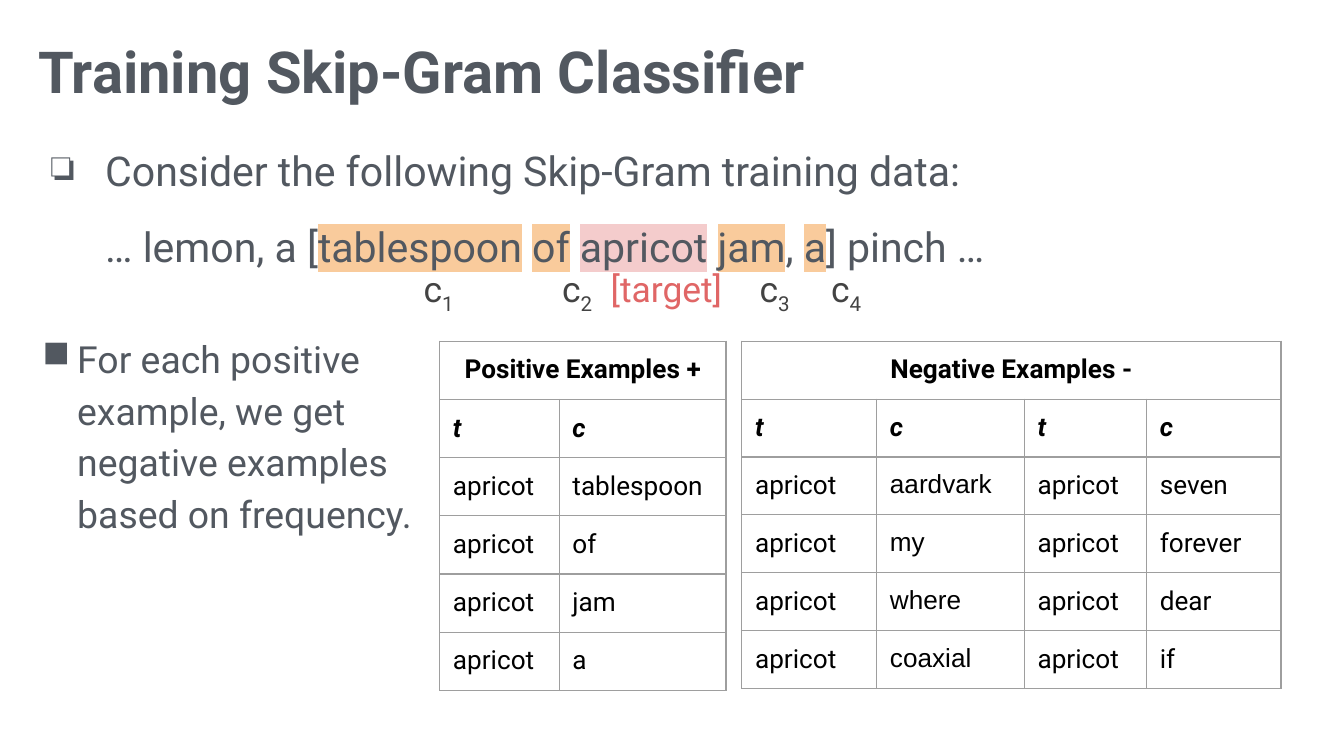
import dataclasses

import lxml.etree
import pptx
import pptx.dml.color
import pptx.enum.text
import pptx.oxml.ns
import pptx.util

Cm, Pt = pptx.util.Cm, pptx.util.Pt
RGB = pptx.dml.color.RGBColor.from_string
qn = pptx.oxml.ns.qn
SubElement = lxml.etree.SubElement
CENTER = pptx.enum.text.PP_ALIGN.CENTER


@dataclasses.dataclass(frozen=True)
class Theme:
    font: str = "Roboto"
    word_font: str = "Arial"
    slate: str = "525860"
    label: str = "434343"
    target: str = "E06666"
    black: str = "000000"
    border: str = "9E9E9E"
    context_mark: str = "F9CB9C"
    target_mark: str = "F4CCCC"
    title_size: int = 31
    lead_size: int = 22
    note_size: int = 20
    label_size: int = 19
    table_size: int = 14


THEME = Theme()


def write(frame, *runs, size, color=THEME.slate, font=THEME.font, bold=False, italic=False,
          align=None, spacing=None, before=None, after=None, bullet=None,
          left=0, hanging=0, inset=None):
    """Add a paragraph; a run is a string or (string, {"mark": colour, "baseline": percent})."""
    frame.word_wrap = True
    if inset is not None:
        frame.margin_left = frame.margin_right = Cm(inset)
        frame.margin_top = frame.margin_bottom = Cm(inset)
    paragraph = frame.paragraphs[0] if not frame.text else frame.add_paragraph()
    paragraph.alignment = align
    paragraph.line_spacing = spacing
    if before is not None:
        paragraph.space_before = Pt(before)
    if after is not None:
        paragraph.space_after = Pt(after)
    properties = paragraph._p.get_or_add_pPr()
    properties.set("marL", str(Cm(left)))
    properties.set("indent", str(-Cm(hanging)))
    if bullet:
        bullet_color = SubElement(properties, qn("a:buClr"))
        SubElement(bullet_color, qn("a:srgbClr"), val=color)
        SubElement(properties, qn("a:buChar"), char=bullet)
    for part in runs:
        text, extra = (part, {}) if isinstance(part, str) else part
        run = paragraph.add_run()
        run.text = text
        run.font.size, run.font.name = Pt(size), font
        run.font.bold, run.font.italic = bold, italic
        run.font.color.rgb = RGB(color)
        run_properties = run._r.get_or_add_rPr()
        if "baseline" in extra:
            run_properties.set("baseline", str(extra["baseline"] * 1000))
        if "mark" in extra:
            highlight = lxml.etree.Element(qn("a:highlight"))
            SubElement(highlight, qn("a:srgbClr"), val=extra["mark"])
            run_properties.find(qn("a:solidFill")).addnext(highlight)


def add_frame(left, top, width, height):
    return slide.shapes.add_textbox(Cm(left), Cm(top), Cm(width), Cm(height)).text_frame


deck = pptx.Presentation()
deck.slide_width, deck.slide_height = Cm(25.4), Cm(14.29)
slide = deck.slides.add_slide(deck.slide_layouts[6])

# Title and training sentence
title = add_frame(0.56, 0.51, 24.2, 1.25)
write(title, "Training Skip-Gram Classifier", size=THEME.title_size, bold=True, inset=0.16)

context = {"mark": THEME.context_mark}
target = {"mark": THEME.target_mark}
lead = add_frame(0.56, 2.46, 24.2, 3.78)
lead_format = dict(size=THEME.lead_size, spacing=1.15, left=1.27, inset=0.16)
write(lead, "Consider the following Skip-Gram training data:", bullet="❏", hanging=1.02,
      **lead_format)
write(lead, "… lemon, a [", ("tablespoon", context), " ", ("of", context), " ",
      ("apricot", target), " ", ("jam", context), ", ", ("a", context), "] pinch …",
      before=10, **lead_format)

# Labels under the words of the window
label_format = dict(size=THEME.label_size, align=CENTER, spacing=1.15, after=10, inset=0.25)
write(add_frame(11.2, 4.67, 2.79, 1.32), "[target]", color=THEME.target, **label_format)
for number, left in enumerate((7.72, 10.34, 14.07, 15.42), start=1):
    write(add_frame(left, 4.67, 1.14, 1.32), "c", (str(number), {"baseline": -25}),
          color=THEME.label, **label_format)

note = add_frame(0.51, 6.07, 8.28, 7.37)
write(note, "For each positive example, we get negative examples based on frequency.",
      size=THEME.note_size, spacing=1.15, bullet="■", left=0.79, hanging=0.66, inset=0.16)

# Example tables: heading, left, row height, column widths, context words by column pair
example_tables = [
    ("Positive Examples +", 8.31, 1.1, (2.26, 3.15),
     [("tablespoon", "of", "jam", "a")]),
    ("Negative Examples -", 14.02, 1.09, (2.55, 2.79, 2.31, 2.54),
     [("aardvark", "my", "where", "coaxial"), ("seven", "forever", "dear", "if")]),
]
for heading, left, row_height, widths, word_columns in example_tables:
    rows = [[heading] + [""] * (len(widths) - 1), ["t", "c"] * len(word_columns)]
    for words in zip(*word_columns):
        rows.append([text for word in words for text in ("apricot", word)])

    examples = slide.shapes.add_table(len(rows), len(widths), Cm(left), Cm(6.45),
                                      Cm(sum(widths)), Cm(row_height * len(rows))).table
    examples.first_row = examples.horz_banding = False
    for column, width in zip(examples.columns, widths):
        column.width = Cm(width)
    for row in examples.rows:
        row.height = Cm(row_height)
    examples.cell(0, 0).merge(examples.cell(0, len(widths) - 1))

    for r, texts in enumerate(rows):
        for c, text in enumerate(texts):
            cell = examples.cell(r, c)
            cell.margin_left = cell.margin_right = Cm(0.25)
            cell.margin_top = cell.margin_bottom = Cm(0.25)
            cell_properties = cell._tc.get_or_add_tcPr()
            for side in ("lnL", "lnR", "lnT", "lnB"):
                edge = SubElement(cell_properties, qn("a:" + side), w=str(Pt(0.75)))
                edge_fill = SubElement(edge, qn("a:solidFill"))
                SubElement(edge_fill, qn("a:srgbClr"), val=THEME.border)
            cell.fill.background()
            if text:
                in_word_font = len(word_columns) == 2 and r > 1 and c == 1
                write(cell.text_frame, text, size=THEME.table_size, color=THEME.black,
                      font=THEME.word_font if in_word_font else THEME.font,
                      bold=r < 2, italic=r == 1, align=CENTER if r == 0 else None)

deck.save("out.pptx")
